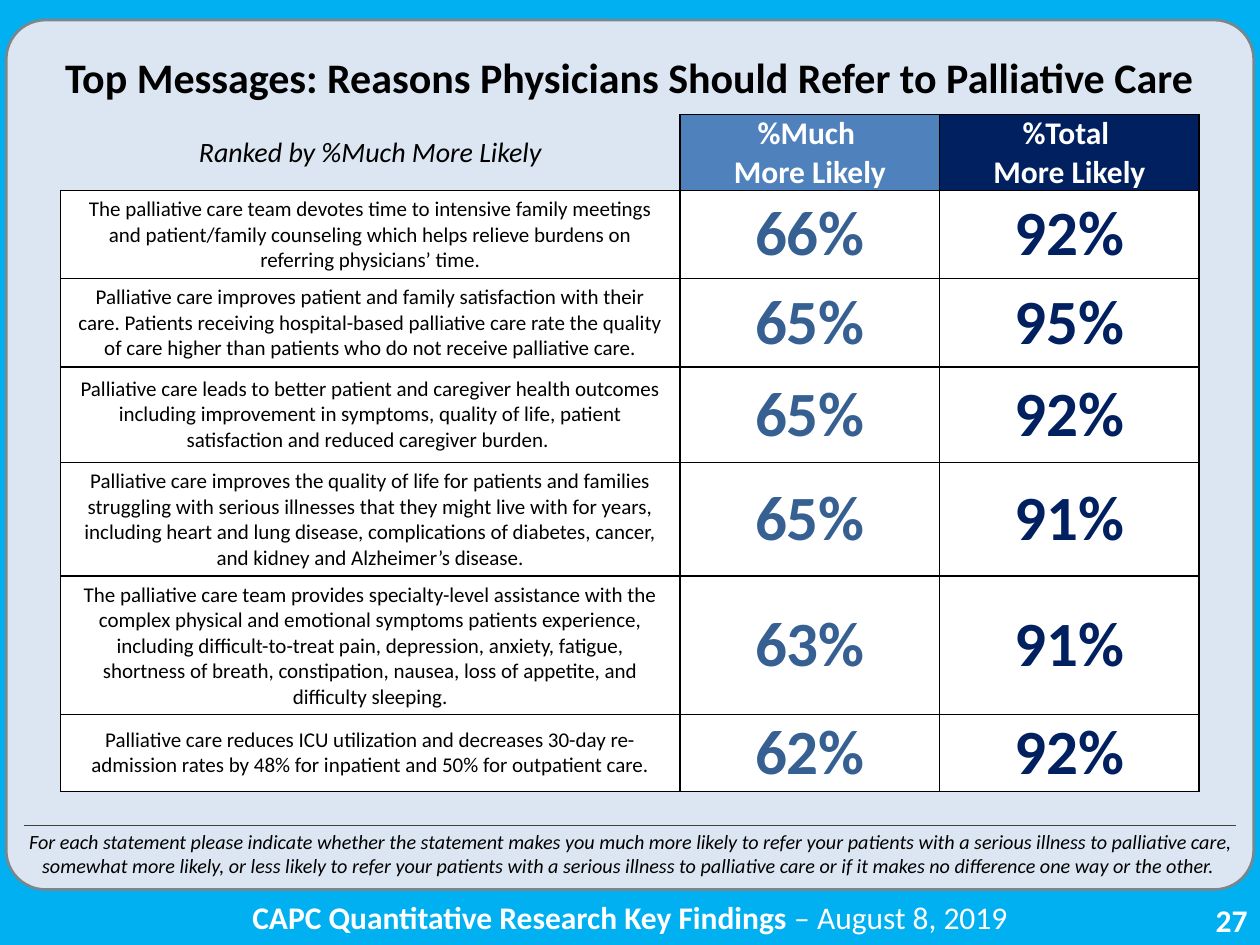
from lxml import etree
from pptx import Presentation
from pptx.dml.color import RGBColor
from pptx.enum.shapes import MSO_CONNECTOR, MSO_SHAPE
from pptx.enum.text import MSO_ANCHOR, MSO_AUTO_SIZE, PP_ALIGN
from pptx.oxml.ns import qn
from pptx.util import Pt

CENTER, RIGHT = PP_ALIGN.CENTER, PP_ALIGN.RIGHT
TOP, MIDDLE = MSO_ANCHOR.TOP, MSO_ANCHOR.MIDDLE
FIT_SHAPE = MSO_AUTO_SIZE.SHAPE_TO_FIT_TEXT
ROUNDED, STRAIGHT = MSO_SHAPE.ROUNDED_RECTANGLE, MSO_CONNECTOR.STRAIGHT

SKY, PANEL, PANEL_EDGE, RULE = "00B0F0", "DCE6F2", "7B868C", "404040"
BLACK, WHITE, BLUE, STEEL, NAVY = "000000", "FFFFFF", "4F81BD", "376092", "002060"

COLUMN_WIDTHS = [354.2, 148.3, 148.3]
ROW_HEIGHTS = [36.7, 43.9, 43.9, 54.7, 54.7, 67, 43.9]
MESSAGES = [
    ("The palliative care team devotes time to intensive family meetings and patient/family "
     "counseling which helps relieve burdens on referring physicians’ time.", "66%", "92%"),
    ("Palliative care improves patient and family satisfaction with their care. Patients "
     "receiving hospital-based palliative care rate the quality of care higher than patients "
     "who do not receive palliative care.", "65%", "95%"),
    ("Palliative care leads to better patient and caregiver health outcomes including "
     "improvement in symptoms, quality of life, patient satisfaction and reduced caregiver "
     "burden. ", "65%", "92%"),
    ("Palliative care improves the quality of life for patients and families struggling with "
     "serious illnesses that they might live with for years, including heart and lung disease, "
     "complications of diabetes, cancer, and kidney and Alzheimer’s disease.", "65%", "91%"),
    ("The palliative care team provides specialty-level assistance with the complex physical "
     "and emotional symptoms patients experience, including difficult-to-treat pain, "
     "depression, anxiety, fatigue, shortness of breath, constipation, nausea, loss of "
     "appetite, and difficulty sleeping.", "63%", "91%"),
    ("Palliative care reduces ICU utilization and decreases 30-day re-admission rates by 48% "
     "for inpatient and 50% for outpatient care.", "62%", "92%"),
]


def color(value):
    """Turn a hex string into a colour."""
    return RGBColor.from_string(value)


def clear_margins(target):
    """Remove the inner margins of a cell or text frame."""
    for side in ("left", "right", "top", "bottom"):
        setattr(target, f"margin_{side}", 0)


class SlideBuilder:
    """Hold the style and the current slide."""

    def __init__(self, slide, font="Calibri"):
        """Keep the slide and the font used for all text."""
        self.slide = slide
        self.font = font

    def background(self, fill):
        """Fill the slide background."""
        self.slide.background.fill.solid()
        self.slide.background.fill.fore_color.rgb = color(fill)

    def add_runs(self, frame, segments, size, ink, align=CENTER):
        """Put segments of text and format into one paragraph."""
        paragraph = frame.paragraphs[0]
        paragraph.alignment = align
        for text, style in segments:
            for index, line in enumerate(text.split("\n")):
                if index:
                    paragraph.add_line_break()
                run = paragraph.add_run()
                run.text = line
                values = {"name": self.font, "size": Pt(size), "bold": False, "italic": False}
                for name, value in {**values, **style}.items():
                    setattr(run.font, name, value)
                run.font.color.rgb = color(ink)

    def text(self, box, segments, size, ink, align=CENTER, anchor=TOP, tight=False):
        """Add a wrapped text box."""
        frame = self.slide.shapes.add_textbox(*map(Pt, box)).text_frame
        frame.word_wrap = True
        frame.vertical_anchor = anchor
        if tight:
            clear_margins(frame)
        else:
            frame.auto_size = FIT_SHAPE
        self.add_runs(frame, segments, size, ink, align)

    def panel(self, box, fill, edge, width, radius):
        """Add a rounded rectangle."""
        shape = self.slide.shapes.add_shape(ROUNDED, *map(Pt, box))
        shape.shadow.inherit = False
        shape.adjustments[0] = radius
        shape.fill.solid()
        shape.fill.fore_color.rgb = color(fill)
        shape.line.color.rgb = color(edge)
        shape.line.width = Pt(width)

    def line(self, ends, ink, width):
        """Add a straight line without a shadow."""
        connector = self.slide.shapes.add_connector(STRAIGHT, *map(Pt, ends))
        connector.line.color.rgb = color(ink)
        connector.line.width = Pt(width)
        etree.SubElement(connector._element.spPr, qn("a:effectLst"))

    def borders(self, cell, shown):
        """Draw the listed cell borders and hide the others."""
        properties = cell._tc.get_or_add_tcPr()
        for side in "LRTB":
            border = etree.SubElement(properties, qn(f"a:ln{side}"), w=str(Pt(1)))
            if side in shown:
                fill = etree.SubElement(border, qn("a:solidFill"))
                etree.SubElement(fill, qn("a:srgbClr"), val=BLACK)
            else:
                etree.SubElement(border, qn("a:noFill"))

    def cell(self, cell, text, size, ink, fill, style, tight=True, shown="LRTB"):
        """Format and fill one table cell."""
        self.borders(cell, shown)
        if fill:
            cell.fill.solid()
            cell.fill.fore_color.rgb = color(fill)
        else:
            cell.fill.background()
        cell.vertical_anchor = MIDDLE
        if tight:
            clear_margins(cell)
        self.add_runs(cell.text_frame, [(text, style)], size, ink)

    def table(self, left, top, height, widths, heights, messages):
        """Add the table of ranked messages."""
        frame = self.slide.shapes.add_table(
            len(heights), len(widths), Pt(left), Pt(top), Pt(sum(widths)), Pt(height))
        table = frame.table
        table.first_row = table.horz_banding = False
        for column, width in zip(table.columns, widths):
            column.width = Pt(width)
        for row, row_height in zip(table.rows, heights):
            row.height = Pt(row_height)
        frame.height = Pt(height)
        bold = {"bold": True}
        self.cell(table.cell(0, 0), "Ranked by %Much More Likely", 16, BLACK, None,
                  {"italic": True}, shown="RB")
        for column, (title, fill) in enumerate([("%Much", BLUE), ("%Total", NAVY)], 1):
            self.cell(table.cell(0, column), f"{title} \nMore Likely", 18, WHITE, fill, bold)
        for row, (message, *shares) in enumerate(messages, 1):
            self.cell(table.cell(row, 0), message, 12, BLACK, WHITE, {}, tight=False)
            for column, (share, ink) in enumerate(zip(shares, (STEEL, NAVY)), 1):
                self.cell(table.cell(row, column), share, 36, ink, WHITE, bold)


def main():
    """Build the slide and save it."""
    presentation = Presentation()
    presentation.slide_width, presentation.slide_height = Pt(720), Pt(540)
    builder = SlideBuilder(presentation.slides.add_slide(presentation.slide_layouts[6]))
    bold, italic = {"bold": True}, {"italic": True}
    builder.background(SKY)
    builder.text((558, 511.2, 162, 28.8), [("27", bold)], 18, WHITE, RIGHT)
    builder.text((56.9, 509.8, 606.2, 28.8),
                 [("CAPC Quantitative Research Key Findings ", bold), ("– August 8, 2019", {})],
                 18, WHITE)
    builder.panel((3.6, 11.5, 712.8, 496.8), PANEL, PANEL_EDGE, 1.5, 0.045)
    builder.text((5, 18, 709.2, 51.8),
                 [("Top Messages: Reasons Physicians Should Refer to Palliative Care", bold)],
                 24, BLACK, anchor=MIDDLE, tight=True)
    builder.table(34.5, 65.5, 387.4, COLUMN_WIDTHS, ROW_HEIGHTS, MESSAGES)
    builder.text((5.8, 470.2, 709.2, 35.3),
                 [("For each statement please indicate whether the statement makes you much more "
                   "likely to refer your patients with a serious illness to palliative care, "
                   "somewhat more likely, or less likely to refer your patients with a serious "
                   "illness to palliative care or if it makes no difference one way or the "
                   "other. ", italic)], 11.5, BLACK)
    builder.line((13.7, 471.6, 706.3, 471.6), RULE, 0.75)
    presentation.save("out.pptx")


if __name__ == "__main__":
    main()
